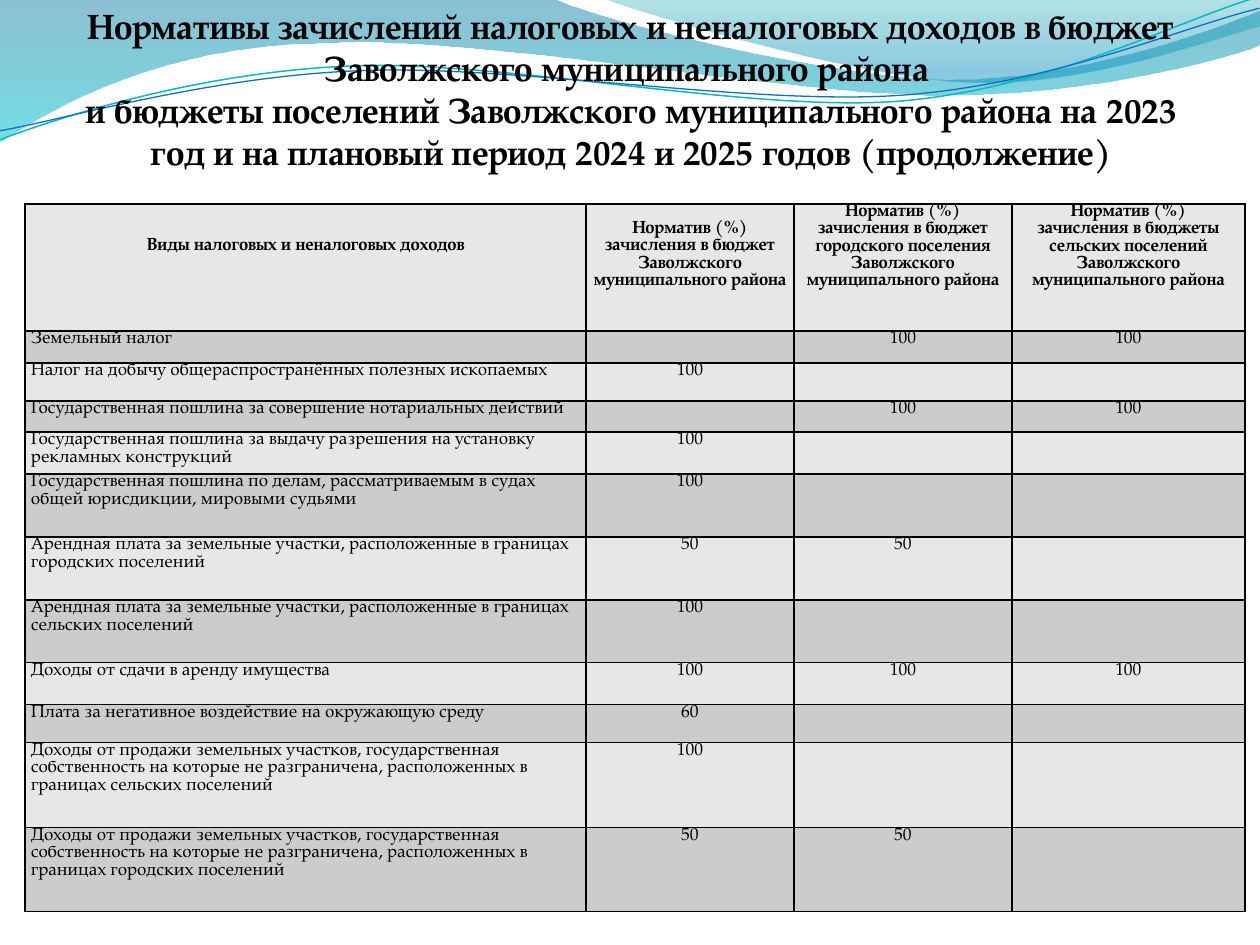
import math

from lxml import etree
from pptx import Presentation
from pptx import util as u
from pptx.dml.color import RGBColor
from pptx.enum import text
from pptx.oxml.ns import qn

PX = 914400 // 126
FONT = "TeX Gyre Pagella"
BLACK = RGBColor(0, 0, 0)
LIGHT = RGBColor(0xE7, 0xE7, 0xE7)
GREY = RGBColor(0xCC, 0xCC, 0xCC)
DEEP_BLUE = RGBColor(0x00, 0x74, 0xA1)
CYAN = RGBColor(0x00, 0xC6, 0xCF)
TEAL = RGBColor(0x00, 0xA1, 0xA9)
BLUE = RGBColor(0x00, 0x8B, 0xBF)
LINE_TEAL = RGBColor(0x0A, 0xB8, 0xBF)
LINE_BLUE = RGBColor(0x0F, 0x6F, 0xC6)

TITLE = [
    "Нормативы зачислений налоговых и неналоговых доходов в бюджет Заволжского муниципального района ",
    "и бюджеты поселений Заволжского муниципального района на 2023 год и на плановый период 2024 и 2025 годов (продолжение)",
]
# Header cells: top margin in px, paragraphs
HEADER = [
    (34, ["Виды налоговых и неналоговых доходов"]),
    (17, ["Норматив (%)", "зачисления в бюджет Заволжского", "муниципального района"]),
    (0, ["Норматив (%)", "зачисления в бюджет городского поселения Заволжского", "муниципального района"]),
    (0, ["Норматив (%)", "зачисления в бюджеты сельских поселений Заволжского", "муниципального района"]),
]
HEADER_HEIGHT = 127
# Row height in px, kind of income, shares of the three budgets
INCOME = [
    (32, "Земельный налог", "", "100", "100"),
    (38, "Налог на добычу общераспространённых полезных ископаемых", "100", "", ""),
    (31, "Государственная пошлина за совершение нотариальных действий", "", "100", "100"),
    (42, "Государственная пошлина за выдачу разрешения на установку рекламных конструкций", "100", "", ""),
    (63, "Государственная пошлина по делам, рассматриваемым в судах общей юрисдикции, мировыми судьями", "100", "", ""),
    (63, "Арендная плата за земельные участки, расположенные в границах городских поселений", "50", "50", ""),
    (63, "Арендная плата за земельные участки, расположенные в границах сельских поселений", "100", "", ""),
    (42, "Доходы от сдачи в аренду имущества", "100", "100", "100"),
    (38, "Плата за негативное воздействие на окружающую среду", "60", "", ""),
    (85, "Доходы от продажи земельных участков, государственная собственность на которые не разграничена, расположенных в границах сельских поселений", "100", "", ""),
    (84, "Доходы от продажи земельных участков, государственная собственность на которые не разграничена, расположенных в границах городских поселений", "50", "50", ""),
]
COLUMNS = [561, 208, 218, 233]

# Outlines: a start point, then segments of one point (line) or three (curve)
WAVES = [
    ((0, 0), [
        [(554, -1)], [(600, 21), (837, 79), (955, 79)],
        [(1075, 79), (1207, 33), (1260, 11)], [(1261, 45)],
        [(1239, 55), (1096, 96), (940, 95)], [(784, 95), (481, 35), (324, 43)],
        [(163, 45), (58, 105), (-1, 142)],
    ], [(0, DEEP_BLUE, 45), (1, CYAN, 55)]),
    ((604, -1), [
        [(641, 14), (859, 78), (969, 82)],
        [(1079, 87), (1211, 40), (1260, 26)], [(1260, 0)],
    ], [(0, TEAL, 30), (0.8, BLUE, 45)]),
]
STRANDS = [
    ((0, 140), [
        [(60, 117), (199, 72), (349, 66)], [(498, 59), (747, 112), (898, 101)],
        [(1050, 89), (1182, 19), (1257, -3)],
    ], LINE_TEAL, 0.85),
    ((0, 131), [
        [(59, 121), (207, 77), (357, 71)], [(508, 64), (752, 106), (903, 95)],
        [(1053, 84), (1186, 26), (1260, 8)],
    ], LINE_BLUE, 0.75),
]
STRAND_TILT = -2.7
STRAND_CENTER = (629, 73)


def level(point):
    """Undo the tilt of a strand, which its shape's rotation brings back."""
    angle = math.radians(-STRAND_TILT)
    dx, dy = (a - b for a, b in zip(point, STRAND_CENTER))
    return (STRAND_CENTER[0] + dx * math.cos(angle) - dy * math.sin(angle),
            STRAND_CENTER[1] + dx * math.sin(angle) + dy * math.cos(angle))


def add_outline(page, start, segments, closed):
    """Add a freeform whose three-point segments are Bezier curves."""
    points = [point for segment in segments for point in segment]
    builder = page.shapes.build_freeform(*start, scale=PX)
    builder.add_line_segments(points, close=closed)
    shape = builder.convert_to_shape()
    shape.shadow.inherit = False
    steps = iter(list(shape.element.iter(qn("a:lnTo"))))
    for segment in segments:
        first, *others = [next(steps) for _ in segment]
        if others:
            first.tag = qn("a:cubicBezTo")
        for step in others:
            first.append(step[0])
            step.getparent().remove(step)
    return shape


def add_waves(page):
    for start, segments, stops in WAVES:
        shape = add_outline(page, start, segments, True)
        shape.line.fill.background()
        shape.fill.gradient()
        shape.fill.gradient_angle = 270
        for stop, (position, color, _) in zip(shape.fill.gradient_stops, stops):
            stop.position = position
            stop.color.rgb = color
        for color, (_, _, opacity) in zip(shape.element.iter(qn("a:srgbClr")), stops):
            etree.SubElement(color, qn("a:alpha"), val=str(opacity * 1000))
    for start, segments, color, width in STRANDS:
        leveled = [[level(point) for point in segment] for segment in segments]
        shape = add_outline(page, level(start), leveled, False)
        shape.rotation = STRAND_TILT
        shape.fill.background()
        shape.line.color.rgb = color
        shape.line.width = u.Pt(width)


def write(frame, lines, size, bold, align, spacing=None):
    for index, line in enumerate(lines):
        para = frame.paragraphs[0] if index == 0 else frame.add_paragraph()
        para.alignment = align
        para.line_spacing = spacing
        if line:
            span = para.add_run()
            span.text = line
            for name, value in dict(name=FONT, size=u.Pt(size), bold=bold).items():
                setattr(span.font, name, value)
            span.font.color.rgb = BLACK
        else:  # keeps an empty cell from stretching its row
            etree.SubElement(para._p, qn("a:endParaRPr"), sz=str(size * 100))


def add_borders(cell):
    properties = cell._tc.get_or_add_tcPr()
    for index, side in enumerate(("lnL", "lnR", "lnT", "lnB")):
        border = etree.Element(qn("a:" + side), w=str(u.Pt(1)))
        fill = etree.SubElement(border, qn("a:solidFill"))
        etree.SubElement(fill, qn("a:srgbClr"), val=str(BLACK))
        properties.insert(index, border)


def fill_cell(cell, lines, color, bold, align, top=0, spacing=10):
    margins = dict(margin_left=6, margin_right=6, margin_top=top, margin_bottom=0)
    for name, value in margins.items():
        setattr(cell, name, value * PX)
    cell.fill.solid()
    cell.fill.fore_color.rgb = color
    write(cell.text_frame, lines, 10, bold, align, u.Pt(spacing))
    add_borders(cell)


def add_income_table(page):
    heights = [HEADER_HEIGHT] + [row[0] for row in INCOME]
    table = page.shapes.add_table(
        len(heights), len(COLUMNS), 25 * PX, 204 * PX,
        sum(COLUMNS) * PX, sum(heights) * PX).table
    for column, width in zip(table.columns, COLUMNS):
        column.width = width * PX
    for row, height in zip(table.rows, heights):
        row.height = height * PX
    center, left = text.PP_ALIGN.CENTER, text.PP_ALIGN.LEFT
    for column, (top, lines) in enumerate(HEADER):
        fill_cell(table.cell(0, column), lines, LIGHT, True, center, top, 9.8)
    for number, (_, *values) in enumerate(INCOME, 1):
        for column, value in enumerate(values):
            fill_cell(table.cell(number, column), [value], GREY if number % 2 else LIGHT,
                      False, center if column else left)


def place_title(page):
    title = page.shapes.title
    title.element.getparent().append(title.element)  # in front of the waves
    for name, value in dict(left=64, top=-3, width=1134, height=176).items():
        setattr(title, name, value * PX)
    frame = title.text_frame
    layout = dict(margin_left=0, margin_right=0, margin_top=6 * PX, margin_bottom=0,
                  word_wrap=True, auto_size=text.MSO_AUTO_SIZE.NONE,
                  vertical_anchor=text.MSO_ANCHOR.BOTTOM)
    for name, value in layout.items():
        setattr(frame, name, value)
    write(frame, TITLE, 20, True, text.PP_ALIGN.CENTER)


def main():
    deck = Presentation()
    deck.slide_width, deck.slide_height = u.Inches(10), u.Inches(7.5)
    page = deck.slides.add_slide(deck.slide_layouts[5])
    add_waves(page)
    place_title(page)
    add_income_table(page)
    deck.save("out.pptx")


if __name__ == "__main__":
    main()
